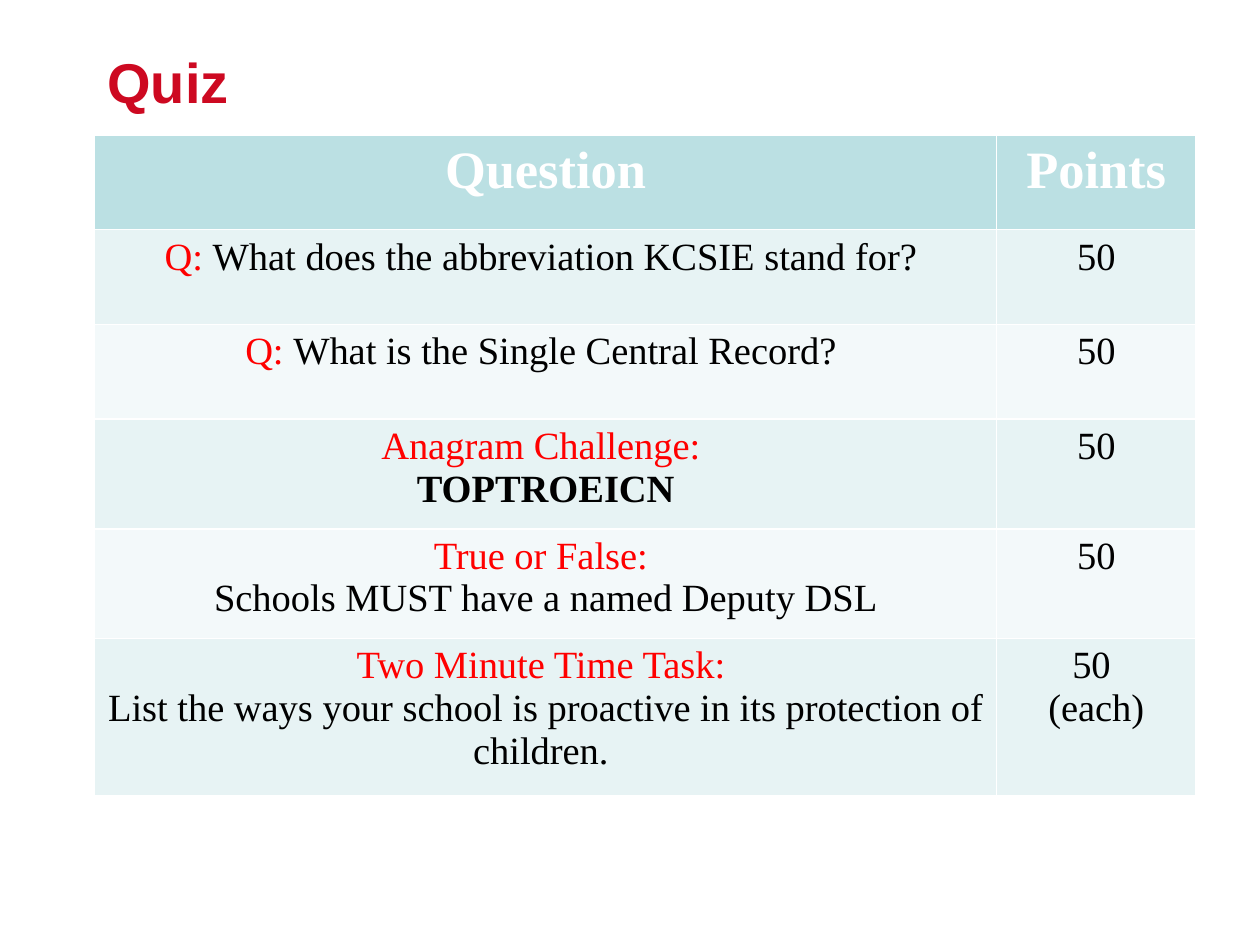
"""Build a quiz slide with a title and a table of questions and points."""
from pptx import Presentation
from pptx.dml.color import RGBColor
from pptx.enum.text import MSO_ANCHOR, PP_ALIGN
from pptx.util import Cm, Pt

RED, BLACK, WHITE = "FF0000", "000000", "FFFFFF"
HEADER, BANDS = "BBE0E3", ("E7F3F4", "F3F9FA")


def rgb(value):
    return RGBColor.from_string(value)


def add_run(p, text, color, **fmt):
    r = p.add_run()
    r.text = text
    for name, value in fmt.items():
        setattr(r.font, name, value)
    r.font.color.rgb = rgb(color)


prs = Presentation()
prs.slide_width, prs.slide_height = Cm(25.4), Cm(19.05)
s = prs.slides.add_slide(prs.slide_layouts[5])

title = s.shapes.title
title_box = {"left": Cm(1.91), "top": Cm(0.84), "width": Cm(22.66), "height": Cm(3.18)}
for name, value in title_box.items():
    setattr(title, name, value)
tf = title.text_frame
tf.vertical_anchor = MSO_ANCHOR.TOP
p = tf.paragraphs[0]
p.alignment = PP_ALIGN.LEFT
add_run(p, "Quiz", "CD0921", name="Arial", size=Pt(32), bold=True)

head = {"name": "Times New Roman", "size": Pt(30), "bold": True}
body = {"name": "Times New Roman", "size": Pt(22), "bold": False}
strong = body | {"bold": True}

rows = [
    ([[("Question", WHITE, head)]], [[("Points", WHITE, head)]]),
    ([[("Q: ", RED, body), ("What does the abbreviation KCSIE stand for? ", BLACK, body)]],
     [[("50", BLACK, body)]]),
    ([[("Q: ", RED, body), ("What is the Single Central Record? ", BLACK, body)]],
     [[("50", BLACK, body)]]),
    ([[("Anagram Challenge: ", RED, body)], [("TOPTROEICN", BLACK, strong)]],
     [[("50", BLACK, body)]]),
    ([[("True or False: ", RED, body)],
      [("Schools MUST have a named Deputy DSL", BLACK, body)]],
     [[("50", BLACK, body)]]),
    ([[("Two Minute Time Task: ", RED, body)],
      [("List the ways your school is proactive in its protection of children. ", BLACK, body)]],
     [[("50 ", BLACK, body)], [("(each)", BLACK, body)]]),
]
widths = [18.18, 4.02]
heights = [1.9, 1.91, 1.91, 2.21, 2.21, 3.18]

table = s.shapes.add_table(len(rows), len(widths), Cm(1.91), Cm(2.73),
                           Cm(sum(widths)), Cm(sum(heights))).table
for col, width in zip(table.columns, widths):
    col.width = Cm(width)
for i, (row, height) in enumerate(zip(rows, heights)):
    table.rows[i].height = Cm(height)
    for j, paragraphs in enumerate(row):
        cell = table.cell(i, j)
        cell.fill.solid()
        cell.fill.fore_color.rgb = rgb(BANDS[(i - 1) % 2] if i else HEADER)
        tf = cell.text_frame
        for k, runs in enumerate(paragraphs):
            p = tf.add_paragraph() if k else tf.paragraphs[0]
            p.alignment = PP_ALIGN.CENTER
            for text, color, fmt in runs:
                add_run(p, text, color, **fmt)

prs.save("out.pptx")
